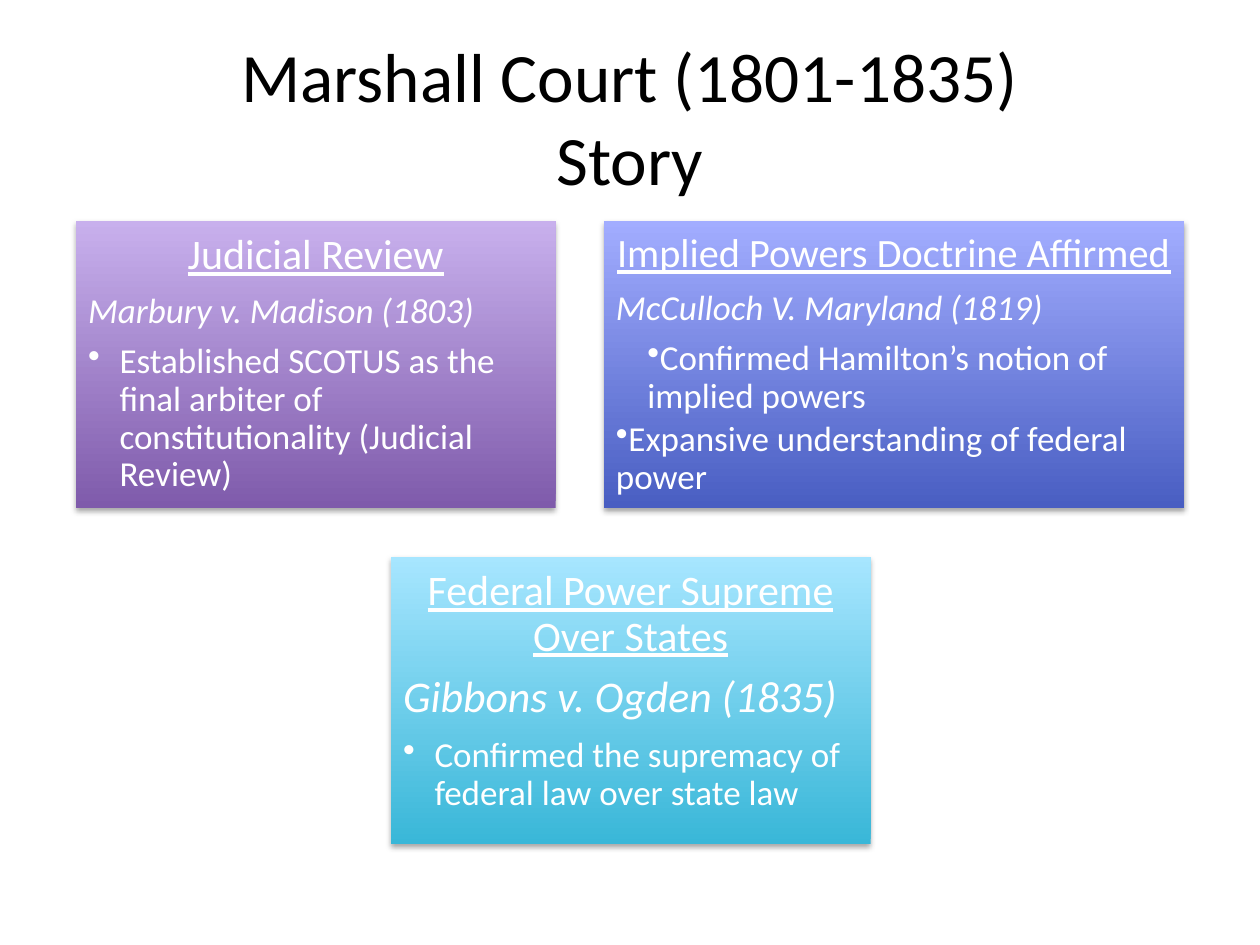
"""Builds the Marshall Court slide with three gradient case cards."""
import pptx
import pptx.dml.color
import pptx.enum.shapes
import pptx.enum.text
import pptx.oxml
import pptx.oxml.ns
import pptx.util
from pptx.util import Inches

ALIGN = pptx.enum.text.PP_ALIGN
ANCHOR = pptx.enum.text.MSO_ANCHOR


def rgb(value):
    return pptx.dml.color.RGBColor.from_string(value)


def write(p, text, size=20, color="FFFFFF", font="Calibri", align=ALIGN.LEFT,
          underline=False, italic=False, spacing=None, after=0,
          bullet=False, margin=0, indent=0):
    p.text = text
    p.alignment = align
    p.line_spacing = spacing
    p.space_after = pptx.util.Pt(after)
    for r in p.runs:
        r.font.name = font
        r.font.size = pptx.util.Pt(size)
        r.font.color.rgb = rgb(color)
        r.font.underline = underline
        r.font.italic = italic
    if bullet:
        pPr = p._p.get_or_add_pPr()
        pPr.set("marL", str(Inches(margin)))
        pPr.set("indent", str(Inches(indent)))
        pptx.oxml.ns.qn("a:buChar")
        pPr.append(pptx.oxml.parse_xml(
            f'<a:buChar {pptx.oxml.ns.nsdecls("a")} char="•"/>'))


class Deck:
    inset = 0.1
    spacing = 0.9

    def __init__(self, s):
        self.s = s

    def title(self, text, x, y, w, h):
        sp = self.s.shapes.add_textbox(Inches(x), Inches(y), Inches(w), Inches(h))
        tf = sp.text_frame
        tf.word_wrap = True
        tf.vertical_anchor = ANCHOR.MIDDLE
        write(tf.paragraphs[0], text, size=39.6, color="000000", align=ALIGN.CENTER)

    def shadow(self, sp):
        sp.shadow.inherit = False
        effects = sp._element.spPr.find(pptx.oxml.ns.qn("a:effectLst"))
        effects.append(pptx.oxml.parse_xml(
            f'<a:outerShdw {pptx.oxml.ns.nsdecls("a")} blurRad="{pptx.util.Pt(3.1)}" '
            f'dist="{pptx.util.Pt(1.8)}" dir="5400000" rotWithShape="0">'
            '<a:srgbClr val="000000"><a:alpha val="35000"/></a:srgbClr></a:outerShdw>'))

    def card(self, x, y, w, h, colors, heading, case, points,
             heading_size=24, case_size=20):
        sp = self.s.shapes.add_shape(pptx.enum.shapes.MSO_SHAPE.RECTANGLE,
                                     Inches(x), Inches(y), Inches(w), Inches(h))
        sp.line.fill.background()
        sp.fill.gradient()
        sp.fill.gradient_angle = 90
        for stop, color in zip(sp.fill.gradient_stops, colors):
            stop.color.rgb = rgb(color)
        self.shadow(sp)
        tf = sp.text_frame
        tf.word_wrap = True
        tf.vertical_anchor = ANCHOR.TOP
        tf.margin_left = tf.margin_right = Inches(self.inset)
        tf.margin_top = tf.margin_bottom = Inches(self.inset)
        write(tf.paragraphs[0], heading, size=heading_size, align=ALIGN.CENTER,
              underline=True, spacing=self.spacing, after=0.35 * heading_size)
        write(tf.add_paragraph(), case, size=case_size, italic=True,
              spacing=self.spacing, after=0.35 * case_size)
        for text, margin, indent in points:
            write(tf.add_paragraph(), text, spacing=self.spacing, after=3,
                  bullet=True, margin=margin, indent=indent)


def main():
    prs = pptx.Presentation()
    prs.slide_width, prs.slide_height = Inches(10), Inches(7.5)
    deck = Deck(prs.slides.add_slide(prs.slide_layouts[6]))
    deck.title("Marshall Court (1801-1835)\vStory", 0.5, 0.3, 9, 1.25)
    top, bottom, width, height = 1.75, 4.42, 3.81, 2.28
    deck.card(0.6, top, width, height, ("7F5BAB", "C8B0ED"),
              "Judicial Review", "Marbury v. Madison (1803)",
              [("Established SCOTUS as the final arbiter of constitutionality "
                "(Judicial Review)", 0.25, -0.25)])
    deck.card(4.79, top, 4.61, height, ("495EC2", "A2ADFF"),
              "Implied Powers Doctrine Affirmed", "McCulloch V. Maryland (1819)",
              [("Confirmed Hamilton’s notion of implied powers", 0.25, 0),
               ("Expansive understanding of federal power", 0, 0)],
              heading_size=23)
    deck.card(3.1, bottom, width, height, ("39B7D8", "A7E6FF"),
              "Federal Power Supreme Over States", "Gibbons v. Ogden (1835)",
              [("Confirmed the supremacy of federal law over state law", 0.25, -0.25)],
              case_size=25)
    prs.save("out.pptx")


if __name__ == "__main__":
    main()
